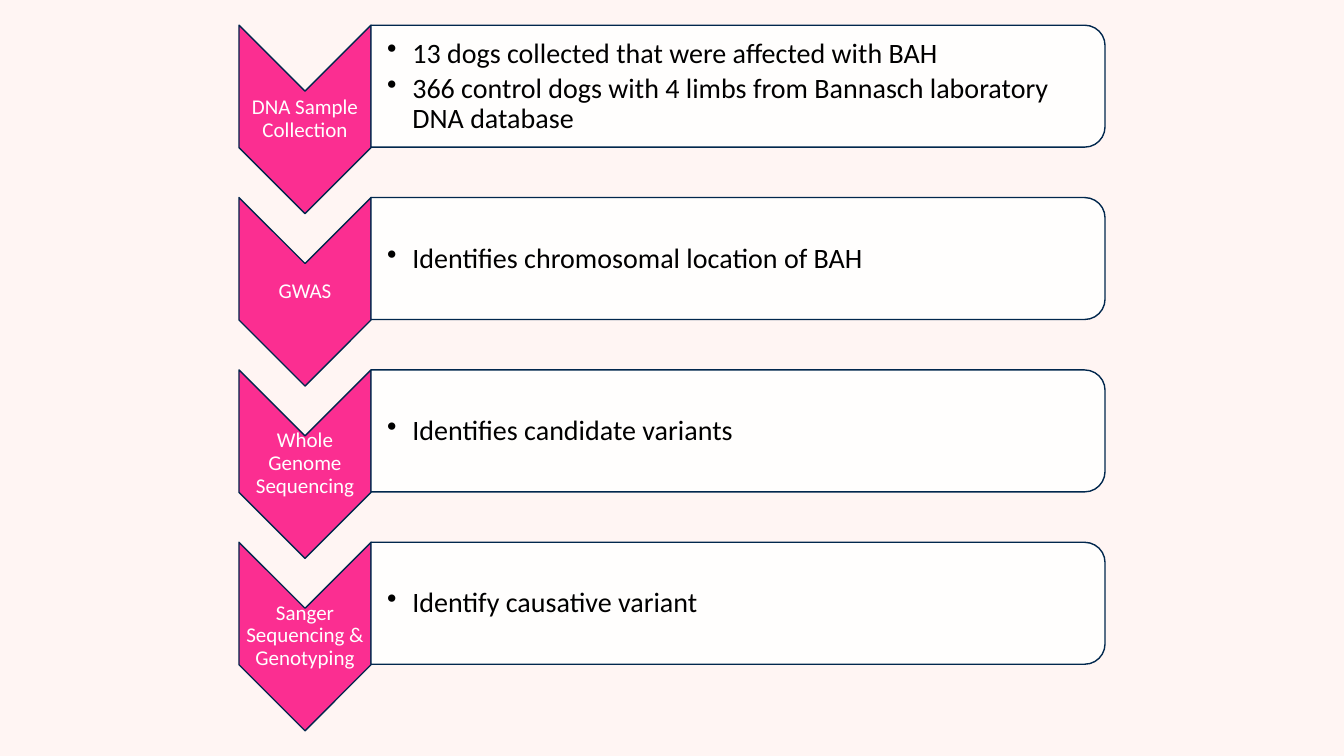
from lxml import etree
from pptx import Presentation
from pptx.dml.color import RGBColor
from pptx.enum.shapes import MSO_SHAPE
from pptx.enum.text import MSO_ANCHOR, PP_ALIGN
from pptx.oxml.ns import qn
from pptx.util import Inches, Pt

CHEVRON = MSO_SHAPE.CHEVRON
BAR = MSO_SHAPE.ROUND_2_SAME_RECTANGLE
MIDDLE = MSO_ANCHOR.MIDDLE
CENTER, LEFT = PP_ALIGN.CENTER, PP_ALIGN.LEFT

BLUSH = RGBColor(0xFF, 0xF5, 0xF3)
PINK = RGBColor(0xFB, 0x2E, 0x91)
NAVY = RGBColor(0x01, 0x27, 0x4D)
WHITE = RGBColor(0xFF, 0xFF, 0xFF)
BLACK = RGBColor(0x00, 0x00, 0x00)

STEPS = [
    ("DNA Sample Collection", [
        "13 dogs collected that were affected with BAH",
        "366 control dogs with 4 limbs from Bannasch laboratory DNA database",
    ]),
    ("GWAS", ["Identifies chromosomal location of BAH"]),
    ("Whole Genome Sequencing", ["Identifies candidate variants"]),
    ("Sanger Sequencing & Genotyping", ["Identify causative variant"]),
]


class StepList:
    """Rows of a downward chevron and a bar, on a grid of two columns."""

    font = "Calibri"
    top, pitch = 0.25, 1.71
    columns = [(2.37, 1.31), (3.68, 7.28)]  # left, width
    chevron_height, bar_height = 1.87, 1.21
    label_offset, label_height = 0.65, 0.56
    bullet_offset, bullet_height = 0.06, 1.1

    def __init__(self, slide):
        self.slide = slide
        slide.background.fill.solid()
        slide.background.fill.fore_color.rgb = BLUSH

    def cell(self, row, column, offset, height):
        left, width = self.columns[column]
        return left, self.top + row * self.pitch + offset, width, height

    def turned_shape(self, kind, cell, color, opacity=100):
        """Add a shape that fills the cell once turned a quarter clockwise."""
        left, top, width, height = cell
        shift = (width - height) / 2
        frame = (left + shift, top - shift, height, width)
        shape = self.slide.shapes.add_shape(kind, *map(Inches, frame))
        shape.rotation = 90
        shape.shadow.inherit = False
        shape.fill.solid()
        shape.fill.fore_color.rgb = color
        if opacity < 100:
            color_node = shape.fill._xPr.find(".//" + qn("a:srgbClr"))
            etree.SubElement(color_node, qn("a:alpha"), val=str(opacity * 1000))
        shape.line.color.rgb = NAVY
        shape.line.width = Pt(1)

    def text(self, cell, lines, size, color, align, gap, inset=0.01, bullets=False):
        box = self.slide.shapes.add_textbox(*map(Inches, cell))
        frame = box.text_frame
        frame.word_wrap = True
        frame.vertical_anchor = MIDDLE
        frame.margin_left = Inches(inset)
        frame.margin_right = frame.margin_top = frame.margin_bottom = Inches(0.01)
        frame.text = "\n".join(lines)
        for paragraph in frame.paragraphs:
            paragraph.alignment = align
            paragraph.line_spacing = 0.9
            paragraph.space_after = Pt(gap)
            paragraph.font.name = self.font
            paragraph.font.size = Pt(size)
            paragraph.font.color.rgb = color
            if bullets:
                self.bullet(paragraph)

    def bullet(self, paragraph):
        properties = paragraph._p.get_or_add_pPr()
        properties.set("marL", str(Inches(0.25)))
        properties.set("indent", str(Inches(-0.25)))
        mark = etree.Element(qn("a:buChar"), char="•")
        properties.find(qn("a:defRPr")).addprevious(mark)

    def step(self, row, label, bullets):
        self.turned_shape(CHEVRON, self.cell(row, 0, 0, self.chevron_height), PINK)
        self.text(self.cell(row, 0, self.label_offset, self.label_height),
                  [label], 15, WHITE, CENTER, gap=6)
        self.turned_shape(BAR, self.cell(row, 1, 0, self.bar_height), WHITE, opacity=90)
        self.text(self.cell(row, 1, self.bullet_offset, self.bullet_height),
                  bullets, 20, BLACK, LEFT, gap=3.5, inset=0.16, bullets=True)


def main():
    deck = Presentation()
    deck.slide_width, deck.slide_height = Inches(13.33), Inches(7.5)
    page = StepList(deck.slides.add_slide(deck.slide_layouts[6]))
    for row, (label, bullets) in enumerate(STEPS):
        page.step(row, label, bullets)
    deck.save("out.pptx")


if __name__ == "__main__":
    main()
